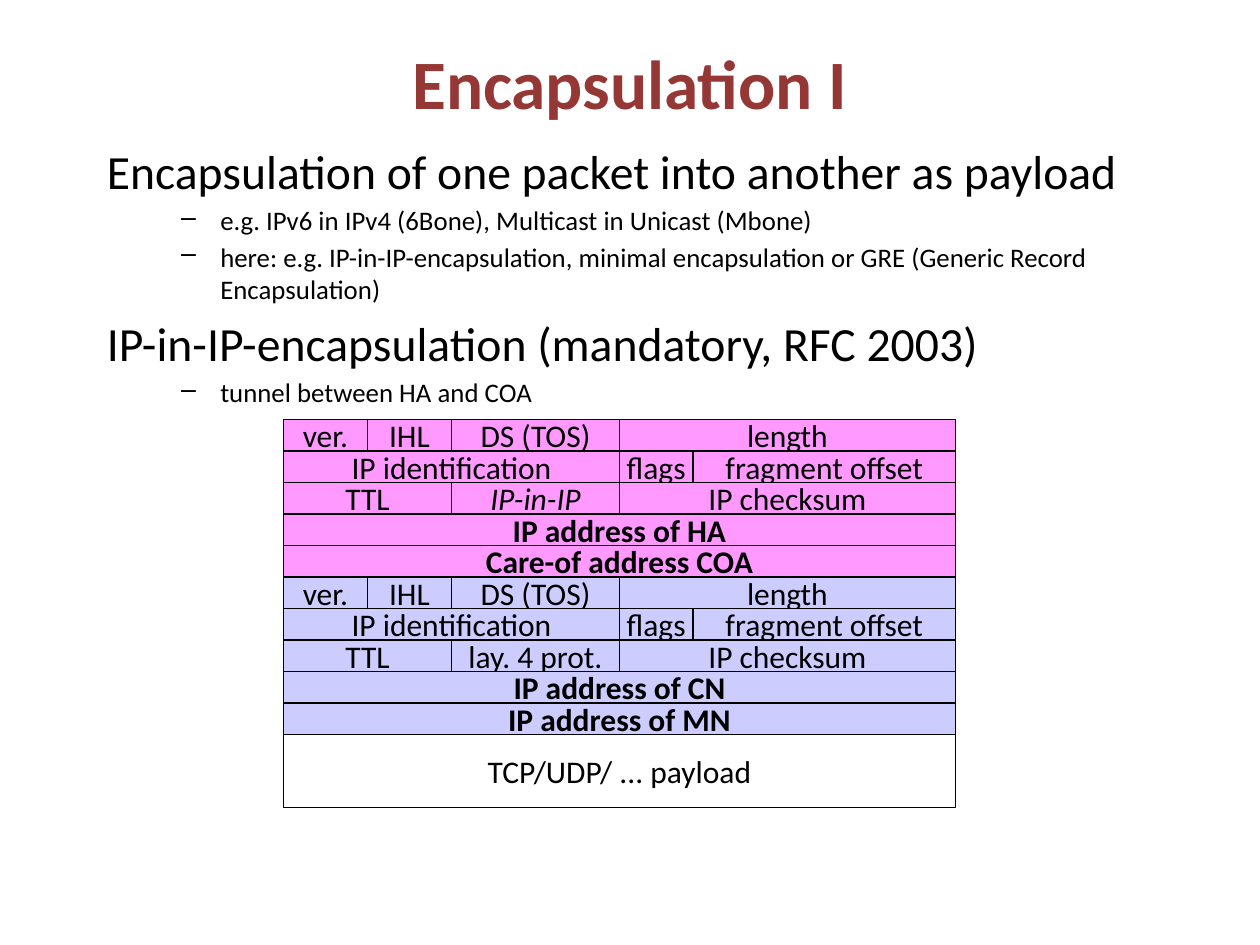
from dataclasses import dataclass

import pptx
import pptx.dml.color
import pptx.enum.shapes
import pptx.enum.text
import pptx.oxml
import pptx.oxml.ns
import pptx.util

Inches = pptx.util.Inches
Pt = pptx.util.Pt
RGBColor = pptx.dml.color.RGBColor
Align = pptx.enum.text.PP_ALIGN
Anchor = pptx.enum.text.MSO_ANCHOR

BLACK = RGBColor(0x00, 0x00, 0x00)
TITLE_RED = RGBColor(0x95, 0x37, 0x35)
OUTER_PINK = RGBColor(0xFF, 0x99, 0xFF)
INNER_BLUE = RGBColor(0xCC, 0xCC, 0xFF)
FONT = "Calibri"

PACKET_LEFT = 2.25
PACKET_TOP = 3.33
ROW_HEIGHT = 0.25
PAYLOAD_HEIGHT = 0.58
WORD_BITS = 32
BIT_WIDTH = 1 / 6


@dataclass(frozen=True)
class Field:
    label: str
    bits: float
    bold: bool = False
    italic: bool = False


@dataclass(frozen=True)
class Header:
    protocol: Field
    source: str
    destination: str
    color: RGBColor

    def rows(self) -> list[list[Field]]:
        return [
            [Field("ver.", 4), Field("IHL", 4), Field("DS (TOS)", 8), Field("length", 16)],
            [Field("IP identification", 16), Field("flags", 3.5), Field("fragment offset", 12.5)],
            [Field("TTL", 8), self.protocol, Field("IP checksum", 16)],
            [Field(self.source, WORD_BITS, bold=True)],
            [Field(self.destination, WORD_BITS, bold=True)],
        ]


@dataclass(frozen=True)
class Level:
    size: float
    margin: float
    indent: float
    space_before: float
    bullet: str = ""


HEADING = Level(27.2, 0.38, -0.38, 5.5)
DETAIL = Level(15.3, 0.9, -0.31, 2.5, "–")

BODY = [
    (HEADING, "Encapsulation of one packet into another as payload"),
    (DETAIL, "e.g. IPv6 in IPv4 (6Bone), Multicast in Unicast (Mbone)"),
    (DETAIL, "here: e.g. IP-in-IP-encapsulation, minimal encapsulation or GRE "
             "(Generic Record Encapsulation)"),
    (HEADING, "IP-in-IP-encapsulation (mandatory, RFC 2003)"),
    (DETAIL, "tunnel between HA and COA"),
]

HEADERS = [
    Header(Field("IP-in-IP", 8, italic=True), "IP address of HA", "Care-of address COA", OUTER_PINK),
    Header(Field("lay. 4 prot.", 8), "IP address of CN", "IP address of MN", INNER_BLUE),
]


def add_span(para, text: str, size: float, color: RGBColor = BLACK,
             bold: bool = False, italic: bool = False) -> None:
    span = para.add_run()
    span.text = text
    span.font.name = FONT
    span.font.size = Pt(size)
    span.font.color.rgb = color
    span.font.bold = bold
    span.font.italic = italic


def add_title(page, text: str) -> None:
    box = page.shapes.add_textbox(Inches(0.5), Inches(0.3), Inches(9), Inches(0.7))
    box.text_frame.word_wrap = True
    box.text_frame.vertical_anchor = Anchor.MIDDLE
    para = box.text_frame.paragraphs[0]
    para.alignment = Align.CENTER
    add_span(para, text, 39.6, TITLE_RED, bold=True)


def format_level(para, level: Level) -> None:
    para.space_before = Pt(level.space_before)
    properties = para._p.get_or_add_pPr()
    properties.set("marL", str(Inches(level.margin)))
    properties.set("indent", str(Inches(level.indent)))
    tag = "a:buChar" if level.bullet else "a:buNone"
    mark = pptx.oxml.parse_xml(f"<{tag} {pptx.oxml.ns.nsdecls('a')}/>")
    if level.bullet:
        para.level = 1
        mark.set("char", level.bullet)
    properties.append(mark)


def add_body(page, lines: list[tuple[Level, str]]) -> None:
    box = page.shapes.add_textbox(Inches(0.75), Inches(1.08), Inches(8.5), Inches(1.92))
    frame = box.text_frame
    frame.word_wrap = True
    for index, (level, text) in enumerate(lines):
        para = frame.add_paragraph() if index else frame.paragraphs[0]
        format_level(para, level)
        add_span(para, text, level.size)


def add_field(page, field: Field, left: float, top: float, height: float,
              color: RGBColor | None = None) -> None:
    box = page.shapes.add_shape(
        pptx.enum.shapes.MSO_SHAPE.RECTANGLE,
        Inches(left), Inches(top), Inches(field.bits * BIT_WIDTH), Inches(height),
    )
    box.shadow.inherit = False
    if color is None:
        box.fill.background()
    else:
        box.fill.solid()
        box.fill.fore_color.rgb = color
    box.line.color.rgb = BLACK
    box.line.width = Pt(0.75)
    box.text_frame.word_wrap = False
    box.text_frame.vertical_anchor = Anchor.MIDDLE
    para = box.text_frame.paragraphs[0]
    para.alignment = Align.CENTER
    add_span(para, field.label, 18, bold=field.bold, italic=field.italic)


def add_packet(page, headers: list[Header], payload: str) -> None:
    top = PACKET_TOP
    for header in headers:
        for row in header.rows():
            left = PACKET_LEFT
            for field in row:
                add_field(page, field, left, top, ROW_HEIGHT, header.color)
                left += field.bits * BIT_WIDTH
            top += ROW_HEIGHT
    add_field(page, Field(payload, WORD_BITS), PACKET_LEFT, top, PAYLOAD_HEIGHT)


def main() -> None:
    deck = pptx.Presentation()
    deck.slide_width = Inches(10)
    deck.slide_height = Inches(7.5)
    page = deck.slides.add_slide(deck.slide_layouts[6])
    add_title(page, "Encapsulation I")
    add_body(page, BODY)
    add_packet(page, HEADERS, "TCP/UDP/ ... payload")
    deck.save("out.pptx")


if __name__ == "__main__":
    main()
